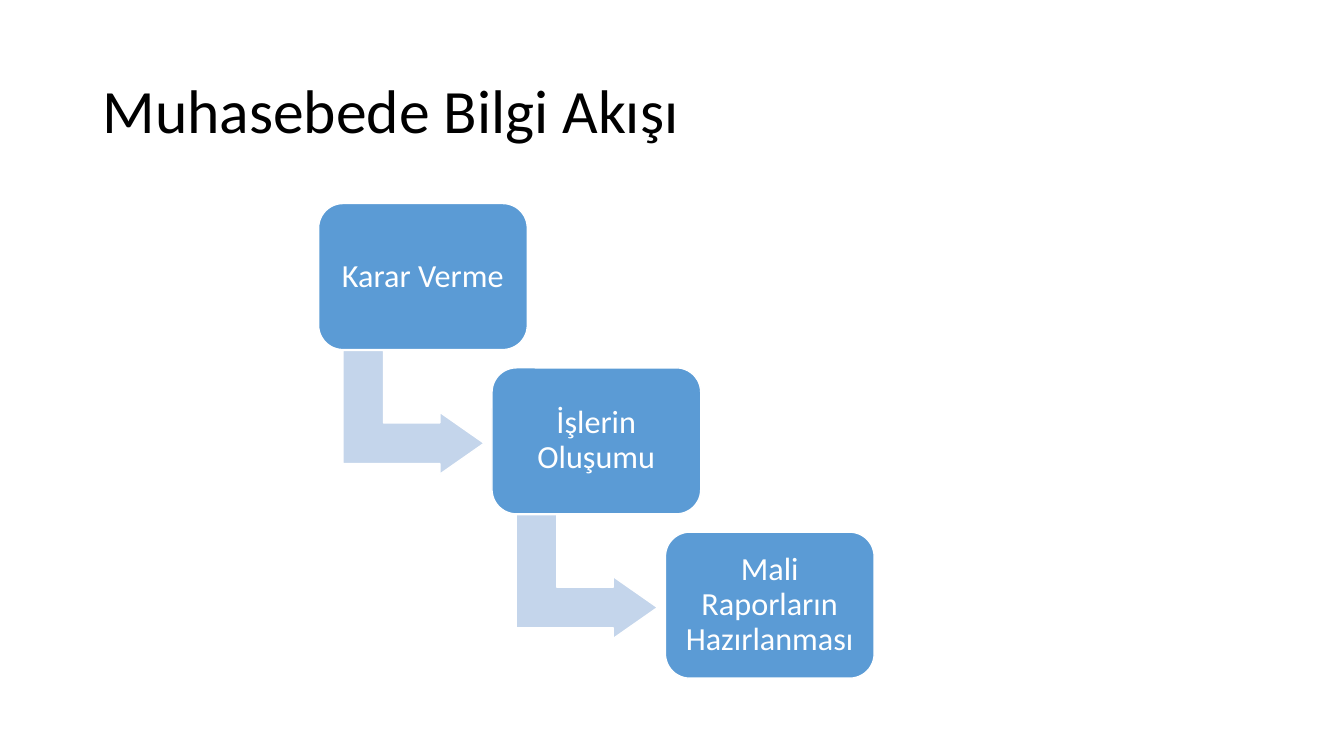
from pptx import Presentation
from pptx.dml.color import RGBColor
from pptx.enum.shapes import MSO_SHAPE
from pptx.enum.text import MSO_ANCHOR, MSO_AUTO_SIZE, PP_ALIGN
from pptx.util import Cm, Pt

COLORS = {"title": "000000", "box": "5B9BD5", "arrow": "C4D5EB", "white": "FFFFFF"}
STEPS = ["Karar Verme", "İşlerin Oluşumu", "Mali Raporların Hazırlanması"]
BOX_LEFT, BOX_TOP, BOX_WIDTH, BOX_HEIGHT = 8.03, 5.13, 5.26, 3.68
STEP_RIGHT, STEP_DOWN = 4.37, 4.14
ARROW_RIGHT, ARROW_DOWN, ARROW_WIDTH, ARROW_HEIGHT = 0.83, 3.48, 3.12, 3.56


class StepSlide:
    font = "Calibri"

    def __init__(self, presentation):
        self.slide = presentation.slides.add_slide(presentation.slide_layouts[5])

    def set_text(self, shape, text, size, color, alignment, inset):
        frame = shape.text_frame
        frame.text = text
        frame_format = {
            "word_wrap": True,
            "auto_size": MSO_AUTO_SIZE.NONE,
            "vertical_anchor": MSO_ANCHOR.MIDDLE,
            "margin_left": Cm(inset),
            "margin_right": Cm(inset),
            "margin_top": Cm(inset),
            "margin_bottom": Cm(inset),
        }
        for name, value in frame_format.items():
            setattr(frame, name, value)
        paragraph = frame.paragraphs[0]
        paragraph.alignment = alignment
        paragraph.line_spacing = 0.9
        for name, value in {"name": self.font, "size": Pt(size)}.items():
            setattr(paragraph.font, name, value)
        paragraph.font.color.rgb = RGBColor.from_string(COLORS[color])

    def title(self, text, left, top, width, height):
        title = self.slide.shapes.title
        position = {"left": left, "top": top, "width": width, "height": height}
        for name, value in position.items():
            setattr(title, name, Cm(value))
        self.set_text(title, text, 44, "title", PP_ALIGN.LEFT, 0.25)

    def shape(self, kind, color, left, top, width, height, adjustments):
        shape = self.slide.shapes.add_shape(
            kind, Cm(left), Cm(top), Cm(width), Cm(height))
        shape.shadow.inherit = False
        shape.fill.solid()
        shape.fill.fore_color.rgb = RGBColor.from_string(COLORS[color])
        shape.line.color.rgb = RGBColor.from_string(COLORS["white"])
        shape.line.width = Pt(1)
        for index, value in enumerate(adjustments):
            shape.adjustments[index] = value
        return shape

    def box(self, text, left, top):
        box = self.shape(MSO_SHAPE.ROUNDED_RECTANGLE, "box", left, top,
                         BOX_WIDTH, BOX_HEIGHT, [0.167])
        self.set_text(box, text, 23, "white", PP_ALIGN.CENTER, 0.25)

    def arrow(self, left, top):
        arrow = self.shape(MSO_SHAPE.BENT_UP_ARROW, "arrow", left, top,
                           ARROW_WIDTH, ARROW_HEIGHT, [0.328, 0.25, 0.358])
        arrow.rotation = 90


def main():
    presentation = Presentation()
    presentation.slide_width, presentation.slide_height = Cm(33.87), Cm(19.05)
    slide = StepSlide(presentation)
    slide.title("Muhasebede Bilgi Akışı", 2.33, 1.01, 29.21, 3.68)
    for index, text in enumerate(STEPS):
        left = BOX_LEFT + index * STEP_RIGHT
        top = BOX_TOP + index * STEP_DOWN
        if index < len(STEPS) - 1:
            slide.arrow(left + ARROW_RIGHT, top + ARROW_DOWN)
        slide.box(text, left, top)
    presentation.save("out.pptx")


if __name__ == "__main__":
    main()
